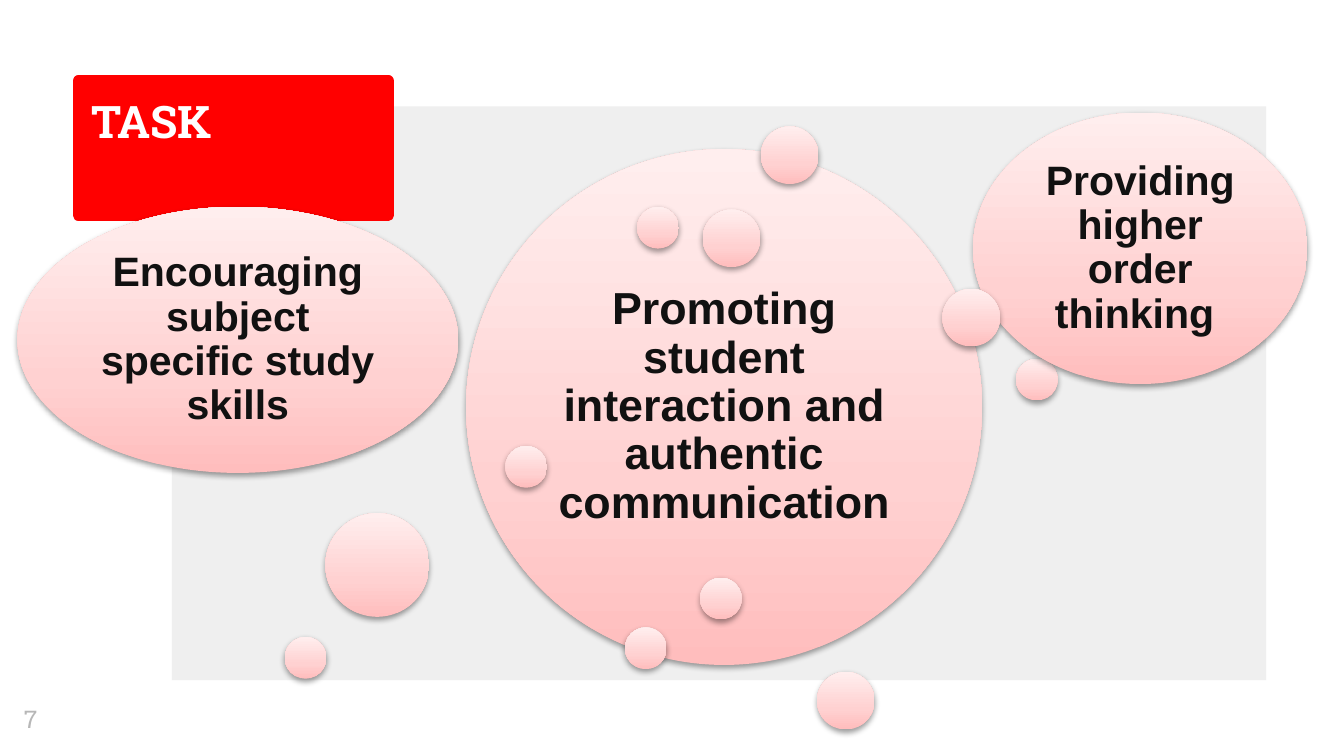
"""Builds the TASK slide: a red title block and gradient bubbles around three goals."""
from dataclasses import dataclass

from lxml import etree
from pptx import Presentation
from pptx.dml.color import RGBColor as Rgb
from pptx.enum.shapes import MSO_SHAPE as Shape
from pptx.enum.text import MSO_ANCHOR as Anchor, PP_ALIGN as Align
from pptx.oxml import parse_xml
from pptx.util import Cm, Pt

DRAWING_NS = "http://schemas.openxmlformats.org/drawingml/2006/main"


@dataclass(frozen=True)
class Theme:
    panel: str = "EFEFEF"
    accent: str = "FF0000"
    on_accent: str = "FFFFFF"
    ink: str = "111111"
    muted: str = "B7B7B7"
    bubble: tuple = ((0, "FFBDBD"), (35, "FFD1D1"), (100, "FFEEEE"))
    shadow: str = "000000"
    heading_font: str = "Roboto Slab"
    body_font: str = "Arial"
    main_size: int = 24
    side_size: int = 22
    number_size: int = 13


class BubbleSlide:
    def __init__(self, slide, theme):
        self.shapes = slide.shapes
        self.theme = theme

    def block(self, left, top, width, height, color, border=0):
        block = self.shapes.add_shape(Shape.RECTANGLE, Cm(left), Cm(top), Cm(width), Cm(height))
        block.shadow.inherit = False
        block.fill.solid()
        block.fill.fore_color.rgb = Rgb.from_string(color)
        if border:
            block.line.color.rgb = Rgb.from_string(color)
            block.line.width = Pt(border)
        else:
            block.line.fill.background()
        return block

    def set_text(self, holder, text, size, font, color, bold=False,
                 align=Align.LEFT, anchor=Anchor.TOP, spacing=1.0, inset=0.25):
        frame = holder.text_frame
        frame.word_wrap = True
        frame.vertical_anchor = anchor
        frame.margin_left = frame.margin_right = Cm(inset)
        frame.margin_top = frame.margin_bottom = Cm(inset)
        paragraph = frame.paragraphs[0]
        paragraph.text = text
        paragraph.alignment = align
        paragraph.line_spacing = spacing
        paragraph.font.size = Pt(size)
        paragraph.font.name = font
        paragraph.font.bold = bold
        paragraph.font.color.rgb = Rgb.from_string(color)

    def text(self, left, top, width, height, text, size, font, color, **style):
        box = self.shapes.add_textbox(Cm(left), Cm(top), Cm(width), Cm(height))
        self.set_text(box, text, size, font, color, **style)

    def bubble(self, left, top, width, height):
        bubble = self.shapes.add_shape(Shape.OVAL, Cm(left), Cm(top), Cm(width), Cm(height))
        bubble.line.fill.background()
        bubble.shadow.inherit = False
        stops = "".join(f'<a:gs pos="{at * 1000}"><a:srgbClr val="{color}"/></a:gs>'
                        for at, color in self.theme.bubble)
        gradient = parse_xml(f'<a:gradFill xmlns:a="{DRAWING_NS}" rotWithShape="1">'
                             f'<a:gsLst>{stops}</a:gsLst>'
                             '<a:lin ang="16200000" scaled="0"/></a:gradFill>')
        properties = bubble.element.spPr
        properties.find(f"{{{DRAWING_NS}}}ln").addprevious(gradient)
        effects = properties.find(f"{{{DRAWING_NS}}}effectLst")
        shadow = etree.SubElement(effects, f"{{{DRAWING_NS}}}outerShdw", blurRad="40000",
                                  dist="20000", dir="5400000", rotWithShape="0")
        color = etree.SubElement(shadow, f"{{{DRAWING_NS}}}srgbClr", val=self.theme.shadow)
        etree.SubElement(color, f"{{{DRAWING_NS}}}alpha", val="38000")

    def dots(self, diameter, *corners):
        for left, top in corners:
            self.bubble(left, top, diameter, diameter)

    def goal(self, left, top, width, height, text, size):
        self.bubble(left, top, width, height)
        inscribed = 0.5 ** 0.5
        margin = (1 - inscribed) / 2
        self.text(left + margin * width, top + margin * height,
                  inscribed * width, inscribed * height, text, size,
                  self.theme.body_font, self.theme.ink, bold=True,
                  align=Align.CENTER, anchor=Anchor.MIDDLE, spacing=0.9, inset=0.23)


def main():
    theme = Theme()
    deck = Presentation()
    deck.slide_width, deck.slide_height = Cm(25.4), Cm(14.29)
    page = BubbleSlide(deck.slides.add_slide(deck.slide_layouts[6]), theme)
    small, medium, large = 0.79, 1.09, 1.96

    page.block(3.25, 2.01, 20.68, 10.85, theme.panel)
    title = page.block(1.48, 1.53, 5.86, 2.54, theme.accent, border=6)
    page.set_text(title, "TASK", theme.main_size, theme.heading_font, theme.on_accent, bold=True)
    page.text(0.2, 13.06, 1.52, 1.09, "7", theme.number_size, theme.heading_font, theme.muted)

    page.goal(8.81, 2.82, 9.75, 9.75,
              "Promoting student interaction and authentic communication", theme.main_size)
    page.dots(medium, (14.38, 2.39), (15.44, 12.7))
    page.dots(small, (11.81, 11.86), (19.2, 6.78), (12.04, 3.91), (9.55, 8.43))

    page.goal(0.33, 3.91, 8.33, 5.03,
              "Encouraging subject specific study skills", theme.side_size)
    page.dots(medium, (13.28, 3.96))
    page.dots(large, (6.15, 9.7))

    page.goal(18.39, 2.13, 6.32, 5.13, "Providing higher order thinking ", theme.side_size)
    page.dots(medium, (17.81, 5.46))
    page.dots(small, (5.38, 12.04), (13.23, 10.92))

    deck.save("out.pptx")


if __name__ == "__main__":
    main()
